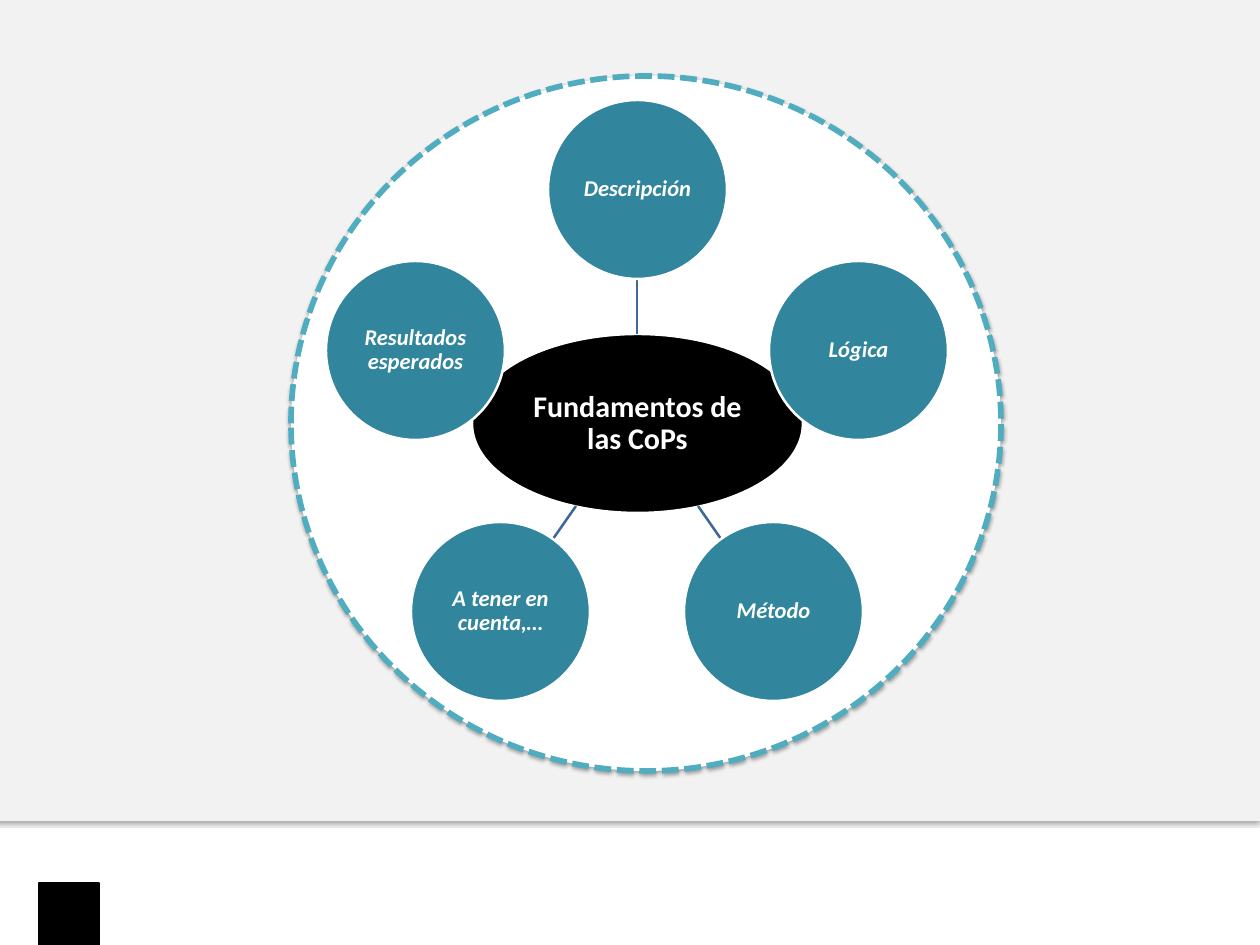
from dataclasses import dataclass
from math import cos, hypot, radians, sin

from lxml.etree import SubElement
from pptx import Presentation
from pptx.dml.color import RGBColor
from pptx.enum.dml import MSO_LINE
from pptx.enum.shapes import MSO_CONNECTOR, MSO_SHAPE
from pptx.enum.text import MSO_ANCHOR, PP_ALIGN
from pptx.oxml.ns import qn
from pptx.util import Emu, Pt

PX = 914400 // 90  # EMU in one px


@dataclass(frozen=True)
class Theme:
    font: str = "Calibri"
    white: str = "FFFFFF"
    black: str = "000000"
    grey: str = "F2F2F2"
    ring: str = "50ADC0"
    topic: str = "31859C"
    spoke: str = "3F6797"
    hub_size: int = 24
    topic_size: int = 18


def px(length):
    return Emu(round(length) * PX)


def write_text(shape, text, *, size, color, font, inset, italic=False):
    frame = shape.text_frame
    frame.word_wrap = True
    frame.vertical_anchor = MSO_ANCHOR.MIDDLE
    frame.margin_left = frame.margin_right = px(inset)
    frame.margin_top = frame.margin_bottom = px(inset)
    para = frame.paragraphs[0]
    para.alignment = PP_ALIGN.CENTER
    para.line_spacing = 0.9
    span = para.add_run()
    span.text = text
    span.font.name = font
    span.font.size = Pt(size)
    span.font.bold = True
    span.font.italic = italic
    span.font.color.rgb = RGBColor.from_string(color)


class Painter:
    def __init__(self, page, theme):
        self.page = page
        self.theme = theme

    def background(self, color):
        fill = self.page.background.fill
        fill.solid()
        fill.fore_color.rgb = RGBColor.from_string(color)

    def shape(self, kind, left, top, width, height, *, fill, line, weight,
              dash=None, shadow=False):
        box = self.page.shapes.add_shape(
            kind, px(left), px(top), px(width), px(height))
        box.shadow.inherit = False
        box.fill.solid()
        box.fill.fore_color.rgb = RGBColor.from_string(fill)
        box.line.color.rgb = RGBColor.from_string(line)
        box.line.width = Pt(weight)
        if dash:
            box.line.dash_style = dash
        if shadow:
            self.cast_shadow(box)
        return box

    def cast_shadow(self, box):
        effects = box._element.spPr.find(qn("a:effectLst"))
        outer = SubElement(effects, qn("a:outerShdw"), blurRad=str(Pt(3.1)),
                           dist=str(Pt(1.8)), dir="5400000", rotWithShape="0")
        color = SubElement(outer, qn("a:srgbClr"), val=self.theme.black)
        SubElement(color, qn("a:alpha"), val="35000")

    def disc(self, center, width, height, text, *, fill, size, inset,
             italic=False):
        x, y = center
        box = self.shape(MSO_SHAPE.OVAL, x - width / 2, y - height / 2,
                         width, height, fill=fill, line=self.theme.white,
                         weight=2)
        write_text(box, text, size=size, color=self.theme.white,
                   font=self.theme.font, inset=inset, italic=italic)

    def spoke(self, start, end):
        line = self.page.shapes.add_connector(
            MSO_CONNECTOR.STRAIGHT, *map(px, (*start, *end)))
        line.line.color.rgb = RGBColor.from_string(self.theme.spoke)
        line.line.width = Pt(2)
        SubElement(line._element.spPr, qn("a:effectLst"))


def main():
    deck = Presentation()
    deck.slide_width, deck.slide_height = px(1260), px(945)
    theme = Theme()
    painter = Painter(deck.slides.add_slide(deck.slide_layouts[6]), theme)

    # Backdrop: corner block, grey panel and dashed ring
    painter.background(theme.white)
    painter.shape(MSO_SHAPE.RECTANGLE, 39, 883, 60, 62, fill=theme.black,
                  line=theme.black, weight=2)
    painter.shape(MSO_SHAPE.RECTANGLE, -17, 0, 1277, 821, fill=theme.grey,
                  line=theme.grey, weight=0.75, shadow=True)
    painter.shape(MSO_SHAPE.OVAL, 291, 76, 710, 695, fill=theme.white,
                  line=theme.ring, weight=4.5, dash=MSO_LINE.SQUARE_DOT,
                  shadow=True)

    # Hub
    hub_x, hub_y = 637, 423
    hub_width, diameter, orbit = 331, 179, 233
    painter.disc((hub_x, hub_y), hub_width, diameter,
                 "Fundamentos de las CoPs", fill=theme.black,
                 size=theme.hub_size, inset=2)

    # Topics, clockwise from the top, each with a spoke from the hub's edge
    topics = ["Descripción", "Lógica", "Método", "A tener en cuenta,…",
              "Resultados esperados"]
    for index, topic in enumerate(topics):
        angle = radians(index * 360 / len(topics))
        across, up = sin(angle), cos(angle)

        def along(distance):
            return hub_x + distance * across, hub_y - distance * up

        hub_edge = 1 / hypot(2 * across / hub_width, 2 * up / diameter)
        painter.spoke(along(hub_edge), along(orbit - diameter / 2))
        painter.disc(along(orbit), diameter, diameter, topic,
                     fill=theme.topic, size=theme.topic_size, inset=1,
                     italic=True)

    deck.save("out.pptx")


if __name__ == "__main__":
    main()
